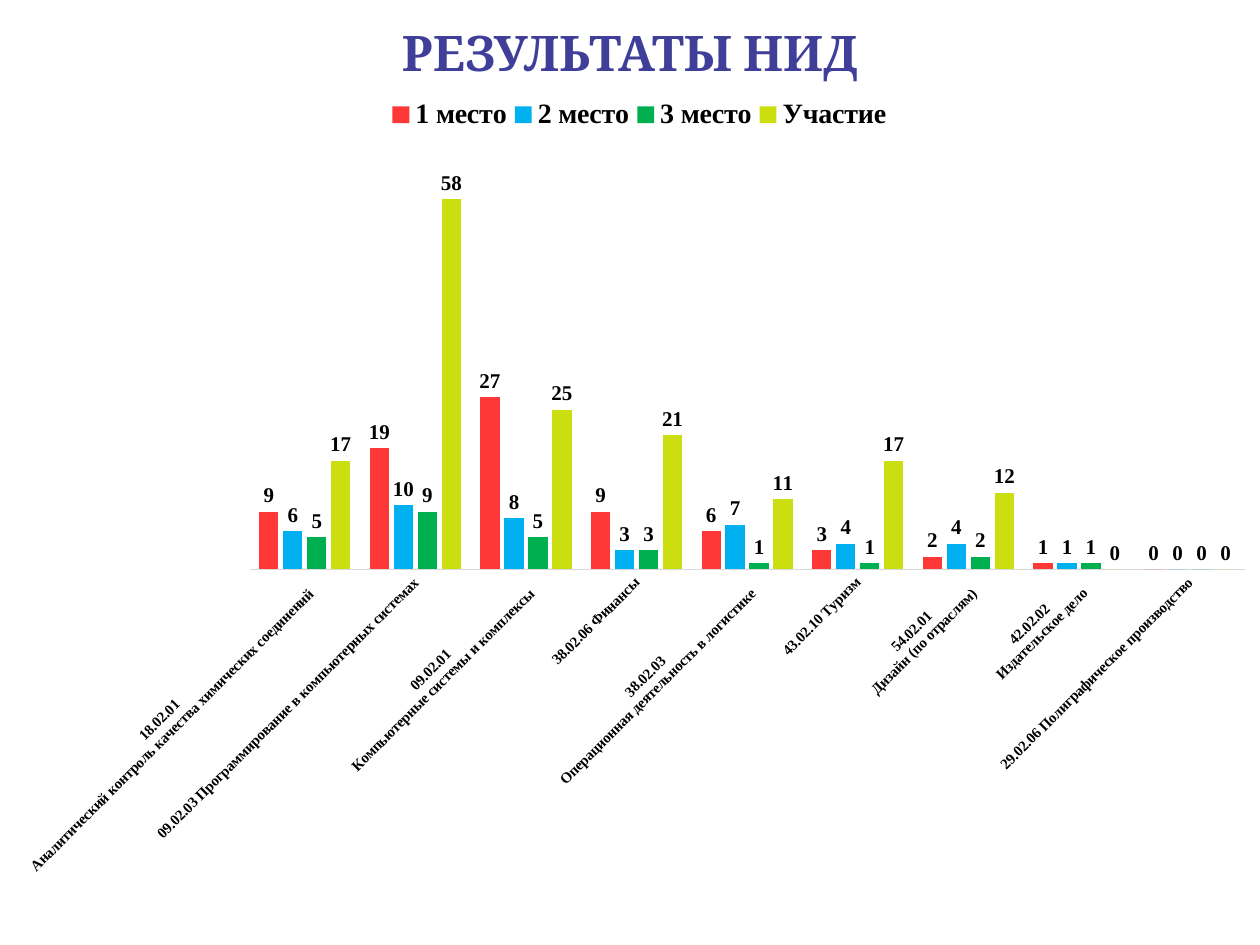
from pptx import Presentation
from pptx.chart.data import CategoryChartData
from pptx.dml.color import RGBColor
from pptx.enum.chart import (XL_CHART_TYPE, XL_LABEL_POSITION as LABEL,
                             XL_LEGEND_POSITION as LEGEND, XL_TICK_LABEL_POSITION as TICK_LABEL,
                             XL_TICK_MARK as TICK)
from pptx.enum.text import PP_ALIGN
from pptx.oxml import parse_xml
from pptx.oxml.ns import nsdecls
from pptx.util import Inches, Pt

LEFT, TOP, WIDTH, HEIGHT = -0.08, 0.43, 10.16, 6.64  # chart, in inches


def set_font(font, color="000000", **values):
    """Apply format values and a hex colour to a font."""
    for name, value in values.items():
        setattr(font, name, value)
    font.color.rgb = RGBColor.from_string(color)


def make_layout(target, x, y, w, h):
    """Return a manual chart layout from a place on the slide in inches."""
    places = {"x": (x - LEFT) / WIDTH, "y": (y - TOP) / HEIGHT, "w": w / WIDTH, "h": h / HEIGHT}
    inner = '<c:layoutTarget val="inner"/>' if target == "inner" else ""
    modes = "".join(f'<c:{k}Mode val="edge"/>' for k in "xy")
    values = "".join(f'<c:{k} val="{v:.4f}"/>' for k, v in places.items())
    return parse_xml(f'<c:layout {nsdecls("c")}><c:manualLayout>{inner}{modes}{values}'
                     '</c:manualLayout></c:layout>')


CATEGORIES = [
    "18.02.01 \nАналитический контроль качества химических соединений",
    "09.02.03 Программирование в компьютерных системах",
    "09.02.01 \nКомпьютерные системы и комплексы",
    "38.02.06 Финансы",
    "38.02.03 \nОперационная деятельность в логистике",
    "43.02.10 Туризм",
    "54.02.01 \nДизайн (по отраслям)",
    "42.02.02 \nИздательское дело",
    "29.02.06 Полиграфическое производство",
]
SERIES = [
    ("1 место", "FE3737", [9, 19, 27, 9, 6, 3, 2, 1, 0]),
    ("2 место", "00B0F0", [6, 10, 8, 3, 7, 4, 4, 1, 0]),
    ("3 место", "00B050", [5, 9, 5, 3, 1, 1, 2, 1, 0]),
    ("Участие", "CADE10", [17, 58, 25, 21, 11, 17, 12, 0, 0]),
]
CHART_FONT = {"name": "Times New Roman", "bold": True}

prs = Presentation()
prs.slide_width, prs.slide_height = Inches(10), Inches(7.5)
s = prs.slides.add_slide(prs.slide_layouts[6])

# Chart
data = CategoryChartData()
data.categories = CATEGORIES
for name, color, values in SERIES:
    data.add_series(name, values)
chart = s.shapes.add_chart(XL_CHART_TYPE.COLUMN_CLUSTERED, Inches(LEFT), Inches(TOP),
                           Inches(WIDTH), Inches(HEIGHT), data).chart
chart.has_title = False
set_font(chart.font, size=Pt(8.5), **CHART_FONT)

plot = chart.plots[0]
plot.gap_width, plot.overlap, plot.vary_by_categories = 100, -24, False
for ser, (name, color, values) in zip(plot.series, SERIES):
    ser.format.fill.solid()
    ser.format.fill.fore_color.rgb = RGBColor.from_string(color)
    labels = ser.data_labels
    labels.show_value = True
    labels.position = LABEL.OUTSIDE_END
    set_font(labels.font, size=Pt(12), **CHART_FONT)

axis = chart.category_axis
axis.major_tick_mark = axis.minor_tick_mark = TICK.NONE
axis.tick_label_position = TICK_LABEL.NEXT_TO_AXIS
axis.format.line.width = Pt(0.75)
axis.format.line.color.rgb = RGBColor.from_string("D9D9D9")
set_font(axis.tick_labels.font, size=Pt(8.5), **CHART_FONT)
body = axis._element.txPr.bodyPr
body.set("rot", "-2700000")
body.set("vert", "horz")

value_axis = chart.value_axis
value_axis.visible = value_axis.has_major_gridlines = False
value_axis.major_tick_mark = value_axis.minor_tick_mark = TICK.NONE
value_axis.minimum_scale, value_axis.maximum_scale = 0, 60

chart.has_legend = True
legend = chart.legend
legend.position = LEGEND.TOP
legend.include_in_layout = False
set_font(legend.font, size=Pt(16), **CHART_FONT)

# Manual places of the legend and the plot area
for old in chart._chartSpace.xpath("//c:legend/c:layout | //c:plotArea/c:layout"):
    old.getparent().remove(old)
legend._element.insert(1, make_layout("outer", 3.05, 0.74, 4.05, 0.34))
chart._chartSpace.chart.plotArea.insert(0, make_layout("inner", 1.98, 1.48, 7.9, 3.04))

# Title
tf = s.shapes.add_textbox(Inches(0.5), Inches(0.13), Inches(9), Inches(1.25)).text_frame
tf.word_wrap = True
p = tf.paragraphs[0]
p.alignment = PP_ALIGN.CENTER
r = p.add_run()
r.text = "РЕЗУЛЬТАТЫ НИД"
set_font(r.font, "3F3F9A", name="Cambria", size=Pt(28), bold=True)
r.font._element.insert(0, parse_xml(
    f'<a:ln {nsdecls("a")} w="{Pt(2.25)}"><a:solidFill><a:srgbClr val="A585B1"/>'
    '</a:solidFill></a:ln>'))

prs.save("out.pptx")
